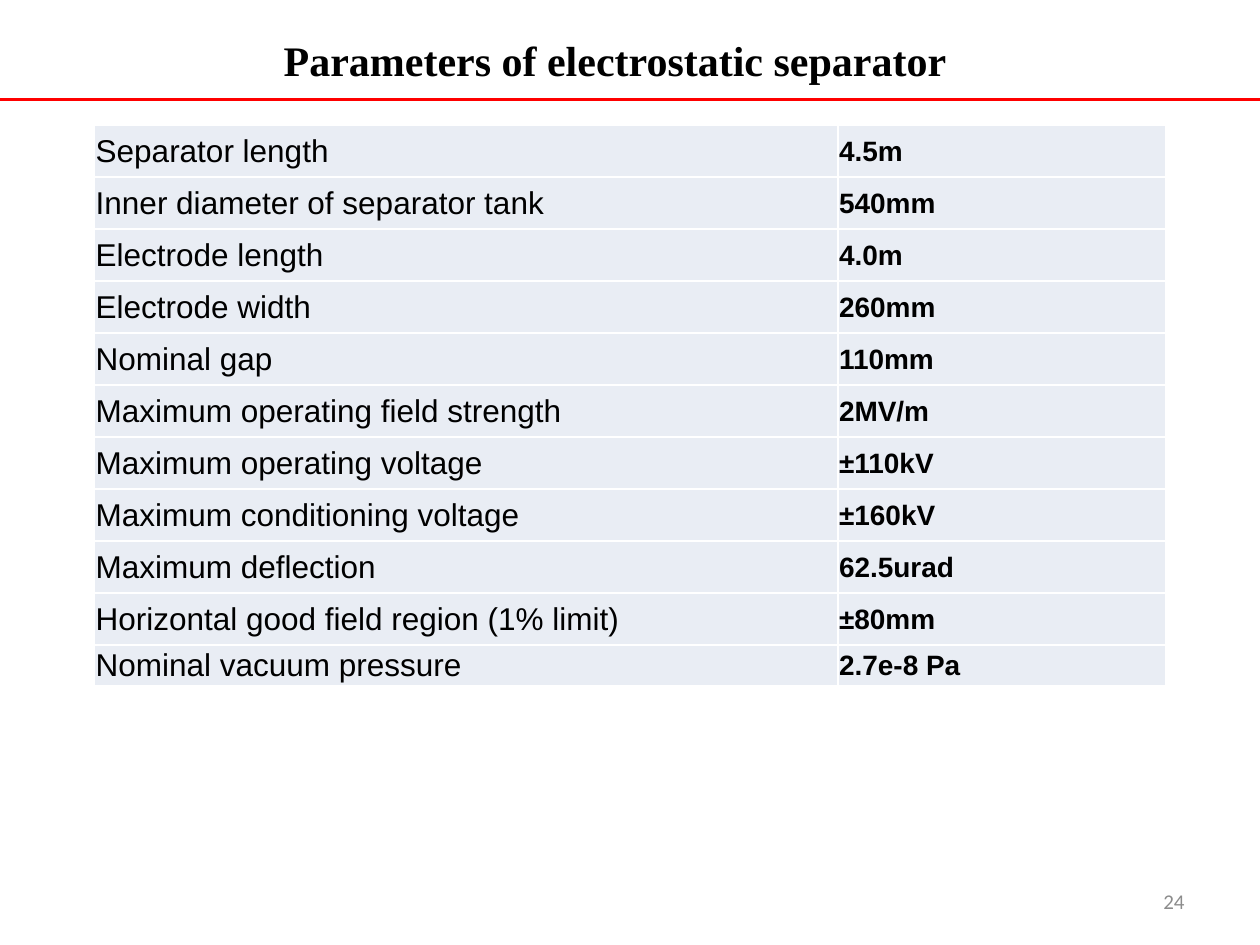
from lxml.etree import SubElement
from pptx import Presentation
from pptx.dml.color import RGBColor
from pptx.enum.shapes import MSO_CONNECTOR as Connector
from pptx.enum.text import MSO_ANCHOR as Anchor, PP_ALIGN as Align
from pptx.oxml.ns import qn
from pptx.util import Inches, Pt

BLACK = RGBColor(0x00, 0x00, 0x00)
RED = RGBColor(0xFF, 0x00, 0x00)
GREY = RGBColor(0x8C, 0x8C, 0x8C)
WHITE = RGBColor(0xFF, 0xFF, 0xFF)
PALE_BLUE = RGBColor(0xE9, 0xED, 0xF4)

PARAMETERS = [
    ("Separator length", "4.5m"),
    ("Inner diameter of separator tank", "540mm"),
    ("Electrode length", "4.0m"),
    ("Electrode width", "260mm"),
    ("Nominal gap", "110mm"),
    ("Maximum operating field strength", "2MV/m"),
    ("Maximum operating voltage", "±110kV"),
    ("Maximum conditioning voltage", "±160kV"),
    ("Maximum deflection", "62.5urad"),
    ("Horizontal good field region (1% limit)", "±80mm"),
    ("Nominal vacuum pressure", "2.7e-8 Pa"),
]


def write(frame, text, font_name, size, color, bold=False, align=Align.LEFT):
    para = frame.paragraphs[0]
    para.text = text
    para.alignment = align
    font = para.font
    font.name, font.size, font.bold = font_name, Pt(size), bold
    font.color.rgb = color


def add_title(page, left, top, width, height):
    title = page.shapes.title
    title.left, title.top, title.width, title.height = left, top, width, height
    frame = title.text_frame
    frame.vertical_anchor = Anchor.MIDDLE
    write(frame, "Parameters of electrostatic separator ",
          "Times New Roman", 24, BLACK, True, Align.CENTER)


def add_rule(page, left, top, width):
    rule = page.shapes.add_connector(
        Connector.STRAIGHT, left, top, left + width, top)
    rule.line.color.rgb = RED
    rule.line.width = Pt(2.25)
    SubElement(rule._element.spPr, qn("a:effectLst"))


def add_page_number(page, left, top, width, height):
    box = page.shapes.add_textbox(left, top, width, height)
    frame = box.text_frame
    frame.word_wrap = True
    frame.vertical_anchor = Anchor.MIDDLE
    write(frame, "24", "Calibri", 12, GREY, align=Align.RIGHT)


def add_borders(cell):
    properties = cell._tc.get_or_add_tcPr()
    for side in ("lnL", "lnR", "lnT", "lnB"):
        line = SubElement(properties, qn(f"a:{side}"), w=str(Pt(1)))
        fill = SubElement(line, qn("a:solidFill"))
        SubElement(fill, qn("a:srgbClr"), val=str(WHITE))


def style_cell(cell, text, size, bold):
    cell.margin_left = cell.margin_right = cell.margin_top = Inches(0.01)
    cell.margin_bottom = 0
    cell.vertical_anchor = Anchor.MIDDLE
    add_borders(cell)
    cell.fill.solid()
    cell.fill.fore_color.rgb = PALE_BLUE
    write(cell.text_frame, text, "Arial", size, BLACK, bold)


def add_parameter_table(page, left, top, width, height):
    table = page.shapes.add_table(
        len(PARAMETERS), 2, left, top, width, height).table
    table.first_row = table.horz_banding = False
    name_column, value_column = table.columns
    value_column.width = Inches(2.6)
    name_column.width = width - value_column.width

    last_height = Inches(0.32)
    row_height = (height - last_height) // (len(PARAMETERS) - 1)
    for index, (name, value) in enumerate(PARAMETERS):
        is_last = index == len(PARAMETERS) - 1
        table.rows[index].height = last_height if is_last else row_height
        style_cell(table.cell(index, 0), name, 18, False)
        style_cell(table.cell(index, 1), value, 16, True)


def main():
    deck = Presentation()
    deck.slide_width, deck.slide_height = Inches(10), Inches(7.5)
    page = deck.slides.add_slide(deck.slide_layouts[5])
    add_title(page, Inches(0.39), Inches(0.2), Inches(9.06), Inches(0.55))
    add_page_number(page, Inches(7.17), Inches(6.95), Inches(2.33), Inches(0.4))
    add_rule(page, 0, Inches(0.79), deck.slide_width)
    add_parameter_table(page, Inches(0.75), Inches(0.99), Inches(8.5), Inches(4.45))
    deck.save("out.pptx")


if __name__ == "__main__":
    main()
